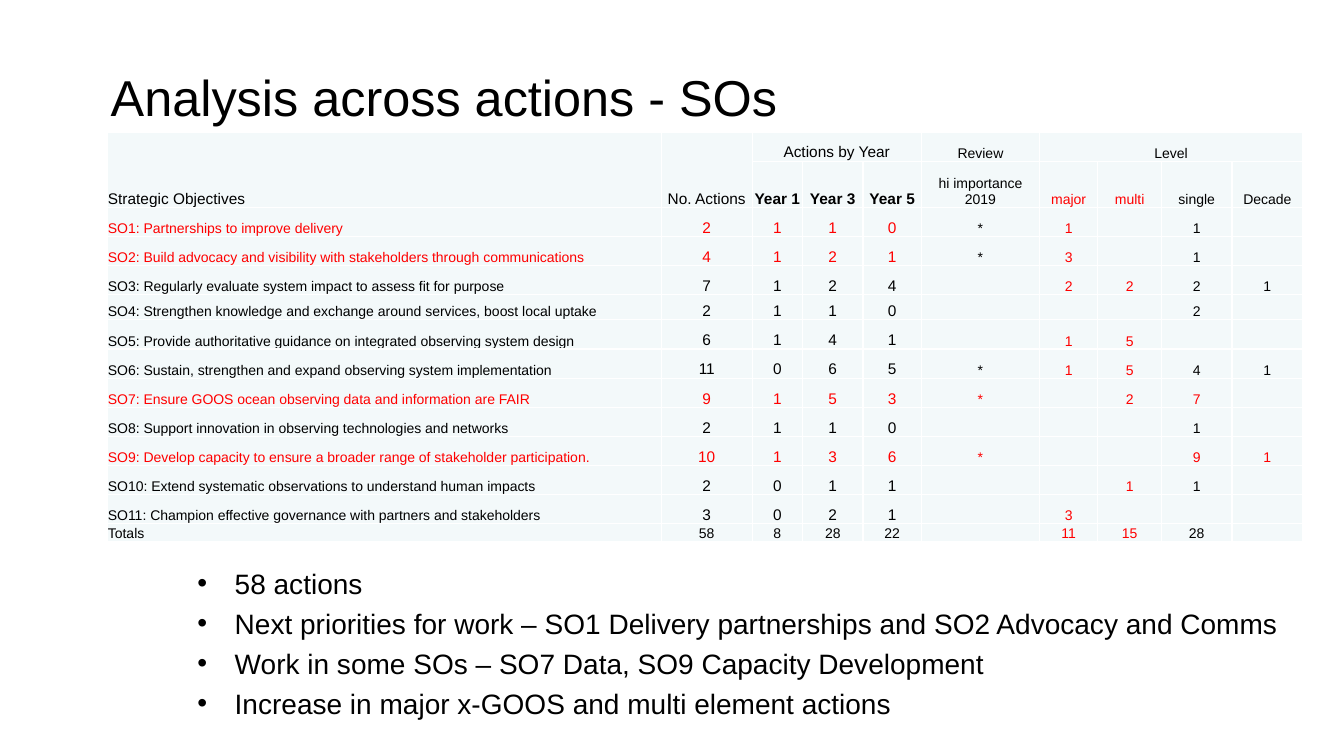
from lxml import etree
from pptx import Presentation
from pptx.dml.color import RGBColor
from pptx.enum.text import MSO_ANCHOR, PP_ALIGN
from pptx.oxml.ns import qn
from pptx.util import Inches, Pt

MIDDLE, BOTTOM = MSO_ANCHOR.MIDDLE, MSO_ANCHOR.BOTTOM
LEFT, CENTER = PP_ALIGN.LEFT, PP_ALIGN.CENTER
FONT = "Arial"
COLORS = {"text": "000000", "accent": "FF0000", "cell": "F3F9FA", "border": "FFFFFF"}

COL_WIDTHS = [5.49, 0.9, 0.5, 0.6, 0.58, 1.17, 0.58, 0.63, 0.7, 0.7]
ROW_HEIGHTS = [0.29, 0.46] + [0.29] * 3 + [0.25] + [0.29] * 7 + [0.18]
MERGES = [(0, 0, 1, 0), (0, 1, 1, 1), (0, 2, 0, 4), (0, 6, 0, 9)]
ROWS = [
    ["Strategic Objectives", "No. Actions", "Actions by Year", "", "", "Review", "Level", "", "", ""],
    ["", "", "Year 1", "Year 3", "Year 5", "hi importance 2019", "major", "multi", "single", "Decade"],
    ["SO1: Partnerships to improve delivery", "2", "1", "1", "0", "*", "1", "", "1", ""],
    ["SO2: Build advocacy and visibility with stakeholders through communications",
     "4", "1", "2", "1", "*", "3", "", "1", ""],
    ["SO3: Regularly evaluate system impact to assess fit for purpose",
     "7", "1", "2", "4", "", "2", "2", "2", "1"],
    ["SO4: Strengthen knowledge and exchange around services, boost local uptake",
     "2", "1", "1", "0", "", "", "", "2", ""],
    ["SO5: Provide authoritative guidance on integrated observing system design",
     "6", "1", "4", "1", "", "1", "5", "", ""],
    ["SO6: Sustain, strengthen and expand observing system implementation",
     "11", "0", "6", "5", "*", "1", "5", "4", "1"],
    ["SO7: Ensure GOOS ocean observing data and information are FAIR",
     "9", "1", "5", "3", "*", "", "2", "7", ""],
    ["SO8: Support innovation in observing technologies and networks",
     "2", "1", "1", "0", "", "", "", "1", ""],
    ["SO9: Develop capacity to ensure a broader range of stakeholder participation.",
     "10", "1", "3", "6", "*", "", "", "9", "1"],
    ["SO10: Extend systematic observations to understand human impacts",
     "2", "0", "1", "1", "", "", "1", "1", ""],
    ["SO11: Champion effective governance with partners and stakeholders",
     "3", "0", "2", "1", "", "3", "", "", ""],
    ["Totals", "58", "8", "28", "22", "", "11", "15", "28", ""],
]
HEADER_ROWS = 2
TOTALS_ROW = len(ROWS) - 1
YEAR_COLS = (2, 3, 4)
LEVEL_ACCENT_COLS = (6, 7)
ACCENT_COLS_BY_ROW = {2: 5, 3: 5, 8: 10, 10: 10}
BULLETS = [
    "58 actions",
    "Next priorities for work – SO1 Delivery partnerships and SO2 Advocacy and Comms",
    "Work in some SOs – SO7 Data, SO9 Capacity Development",
    "Increase in major x-GOOS and multi element actions",
]


def add_run(p, text, size, color="text", bold=False):
    r = p.add_run()
    r.text = text
    r.font.name = FONT
    r.font.size = Pt(size)
    r.font.bold = bold
    r.font.color.rgb = RGBColor.from_string(COLORS[color])


def add_text_frame(s, x, y, w, h):
    tf = s.shapes.add_textbox(Inches(x), Inches(y), Inches(w), Inches(h)).text_frame
    tf.word_wrap = True
    return tf


def add_title(s, x, y, w, h):
    tf = add_text_frame(s, x, y, w, h)
    tf.vertical_anchor = MIDDLE
    add_run(tf.paragraphs[0], "Analysis across actions - SOs", 36)


def add_bullets(s, x, y, w, h):
    tf = add_text_frame(s, x, y, w, h)
    for i, text in enumerate(BULLETS):
        p = tf.paragraphs[0] if i == 0 else tf.add_paragraph()
        pPr = p._p.get_or_add_pPr()
        pPr.set("marL", str(Inches(0.37)))
        pPr.set("indent", str(-Inches(0.37)))
        etree.SubElement(pPr, qn("a:buFont"), typeface=FONT)
        etree.SubElement(pPr, qn("a:buChar"), char="•")
        if i:
            p.space_before = Pt(4.6)
        add_run(p, text, 20)


def add_borders(cell):
    tcPr = cell._tc.get_or_add_tcPr()
    for i, side in enumerate(("lnL", "lnR", "lnT", "lnB")):
        ln = etree.Element(qn(f"a:{side}"), w=str(Pt(1)))
        fill = etree.SubElement(ln, qn("a:solidFill"))
        etree.SubElement(fill, qn("a:srgbClr"), val=COLORS["border"])
        tcPr.insert(i, ln)


def cell_style(row, col):
    if row < HEADER_ROWS:
        size = 11 if col < 5 else 10
    else:
        size = 11 if 1 <= col < 5 and row != TOTALS_ROW else 10
    is_level = row > 0 and col in LEVEL_ACCENT_COLS
    is_accent = is_level or col < ACCENT_COLS_BY_ROW.get(row, 0)
    return size, "accent" if is_accent else "text", row == 1 and col in YEAR_COLS


def add_cell(cell, text, row, col):
    cell.fill.solid()
    cell.fill.fore_color.rgb = RGBColor.from_string(COLORS["cell"])
    cell.margin_left = cell.margin_right = cell.margin_top = cell.margin_bottom = 0
    cell.vertical_anchor = BOTTOM
    add_borders(cell)
    p = cell.text_frame.paragraphs[0]
    p.alignment = CENTER if col else LEFT
    if text:
        add_run(p, text, *cell_style(row, col))
    else:
        etree.SubElement(p._p, qn("a:endParaRPr"), sz="1000")


def add_objectives_table(s, x, y, w, h):
    table = s.shapes.add_table(len(ROWS), len(COL_WIDTHS), Inches(x), Inches(y),
                               Inches(w), Inches(h)).table
    table.first_row = table.horz_banding = False
    for column, width in zip(table.columns, COL_WIDTHS):
        column.width = Inches(width * w / sum(COL_WIDTHS))
    for row, height in zip(table.rows, ROW_HEIGHTS):
        row.height = Inches(height * h / sum(ROW_HEIGHTS))
    for i, values in enumerate(ROWS):
        for j, text in enumerate(values):
            add_cell(table.cell(i, j), text, i, j)
    for top, left, bottom, right in MERGES:
        table.cell(top, left).merge(table.cell(bottom, right))


def main():
    prs = Presentation()
    prs.slide_width, prs.slide_height = Inches(13.33), Inches(7.5)
    s = prs.slides.add_slide(prs.slide_layouts[6])
    add_title(s, 1, 0.33, 11.33, 1.25)
    add_bullets(s, 1.86, 5.57, 11.07, 1.57)
    add_objectives_table(s, 1.07, 1.31, 11.85, 4.07)
    prs.save("out.pptx")


if __name__ == "__main__":
    main()
